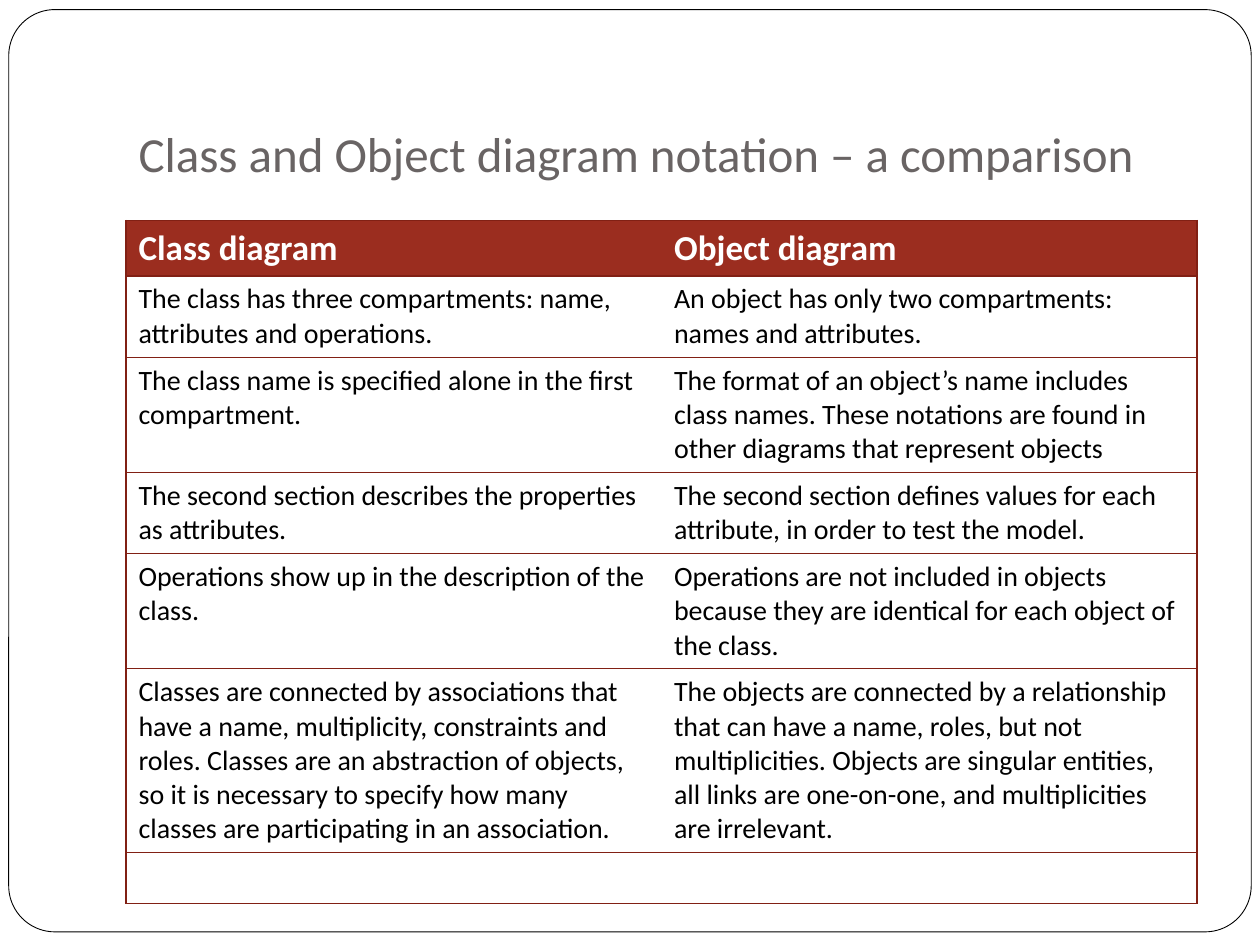
"""Build a slide comparing class and object diagram notation in a table."""
from lxml import etree
from pptx import Presentation
from pptx import util as u
from pptx.dml.color import RGBColor
from pptx.enum import shapes, text
from pptx.oxml.ns import qn


def paint(target, colour):
    target.solid()
    target.fore_color.rgb = RGBColor.from_string(colour)


def add_border(cell, side, colour):
    line = etree.SubElement(cell._tc.get_or_add_tcPr(), qn(f"a:ln{side}"), w=str(u.Pt(0.75)))
    if colour is None:
        etree.SubElement(line, qn("a:noFill"))
    else:
        fill = etree.SubElement(line, qn("a:solidFill"))
        etree.SubElement(fill, qn("a:srgbClr"), val=colour)


FONT = "Calibri"
HEADER, BORDER = "9B2D1F", "812014"
ROWS = [
    ("Class diagram", "Object diagram"),
    ("The class has three compartments: name, attributes and operations.",
     "An object has only two compartments: names and attributes."),
    ("The class name is specified alone in the first compartment.",
     "The format of an object’s name includes class names. These notations are found in "
     "other diagrams that represent objects"),
    ("The second section describes the properties as attributes.",
     "The second section defines values for each attribute, in order to test the model."),
    ("Operations show up in the description of the class.",
     "Operations are not included in objects because they are identical for each object of the class."),
    ("Classes are connected by associations that have a name, multiplicity, constraints and roles. "
     "Classes are an abstraction of objects, so it is necessary to specify how many classes are "
     "participating in an association.",
     "The objects are connected by a relationship that can have a name, roles, but not "
     "multiplicities. Objects are singular entities, all links are one-on-one, and "
     "multiplicities are irrelevant."),
    ("", ""),
]

deck = Presentation()
deck.slide_width, deck.slide_height = u.Pt(720), u.Pt(540)
page = deck.slides.add_slide(deck.slide_layouts[5])

title = page.shapes.title
title.left, title.top, title.width, title.height = u.Pt(72), u.Pt(21.6), u.Pt(612), u.Pt(90)
frame = title.text_frame
frame.text = "Class and Object diagram notation – a comparison"
frame.vertical_anchor = text.MSO_ANCHOR.BOTTOM
frame.margin_left = frame.margin_right = frame.margin_bottom = u.Pt(7.2)
frame.margin_top = u.Pt(3.6)
para = frame.paragraphs[0]
para.alignment = text.PP_ALIGN.LEFT
para.font.name, para.font.size = FONT, u.Pt(28)
para.font.color.rgb = RGBColor.from_string("696464")

border = page.shapes.add_shape(
    shapes.MSO_SHAPE.ROUNDED_RECTANGLE, u.Pt(5), u.Pt(5.5), u.Pt(710), u.Pt(527))
border.adjustments[0] = 0.05
border.shadow.inherit = False
paint(border.fill, "FFFFFF")
paint(border.line.fill, "000000")
border.line.width = u.Pt(0.5)
title.element.addprevious(border.element)

row_height = 29.2
table = page.shapes.add_table(
    len(ROWS), 2, u.Pt(72), u.Pt(126), u.Pt(612), u.Pt(row_height * len(ROWS))).table
table.horz_banding = False
for row, texts in enumerate(ROWS):
    table.rows[row].height = u.Pt(row_height)
    for column, words in enumerate(texts):
        cell = table.cell(row, column)
        cell.text = words
        add_border(cell, "L", BORDER if column == 0 else None)
        add_border(cell, "R", BORDER if column == 1 else None)
        add_border(cell, "T", BORDER)
        add_border(cell, "B", BORDER)
        if row == 0:
            paint(cell.fill, HEADER)
        else:
            cell.fill.background()
        font = cell.text_frame.paragraphs[0].font
        font.name, font.size, font.bold = FONT, u.Pt(20 if row == 0 else 16), row == 0
        font.color.rgb = RGBColor.from_string("FFFFFF" if row == 0 else "000000")

deck.save("out.pptx")
